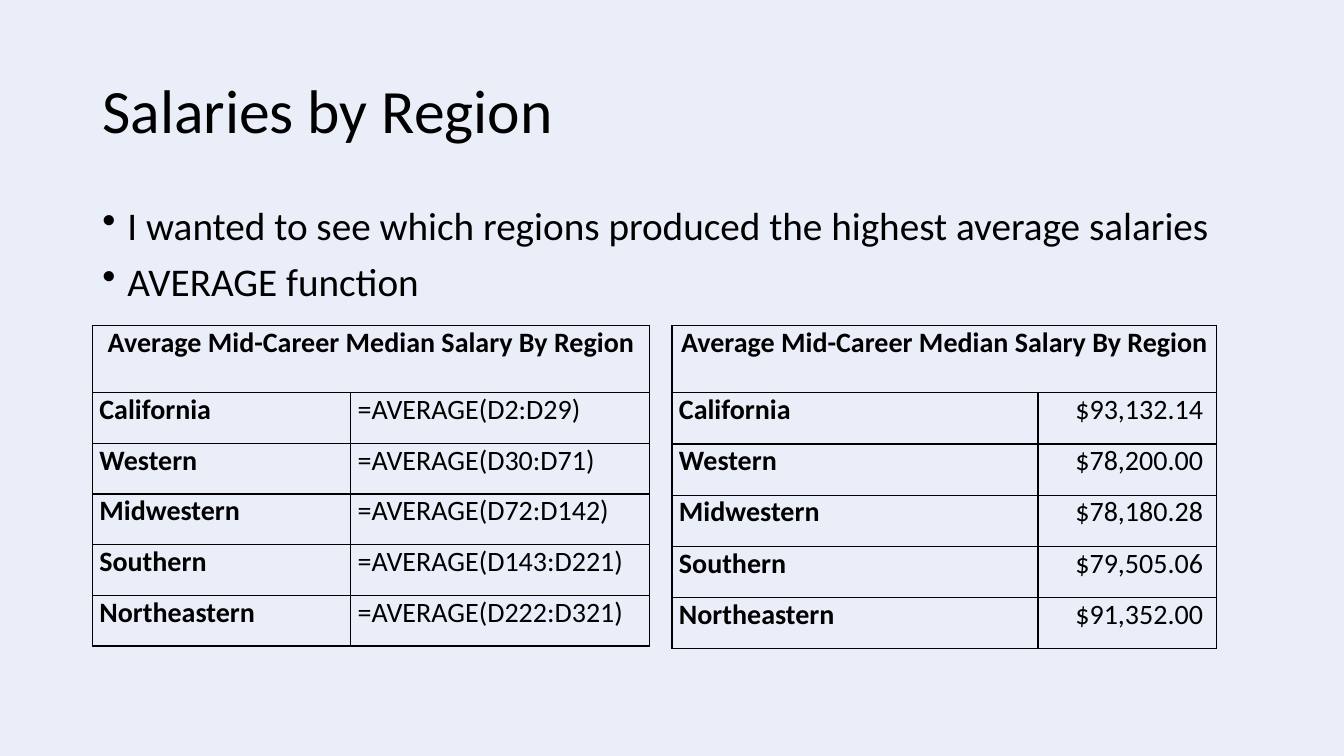
import dataclasses

import lxml.etree
import pptx
import pptx.dml.color
import pptx.enum.text
import pptx.oxml
import pptx.oxml.ns
import pptx.util

Pt = pptx.util.Pt
Align = pptx.enum.text.PP_ALIGN
Anchor = pptx.enum.text.MSO_ANCHOR


@dataclasses.dataclass(frozen=True)
class Theme:
    font: str = "Calibri"
    background: str = "E9EEF8"
    ink: str = "000000"
    title_size: float = 44
    body_size: float = 28
    table_size: float = 20
    border_width: float = 1
    cell_inset: float = 5
    amount_inset: float = 9.5


class SlideBuilder:
    def __init__(self, slide, theme):
        self.slide = slide
        self.theme = theme

    def paint_background(self):
        fill = self.slide.background.fill
        fill.solid()
        fill.fore_color.rgb = pptx.dml.color.RGBColor.from_string(self.theme.background)

    def style_paragraph(self, paragraph, size, bold=False):
        font = paragraph.font
        font.name = self.theme.font
        font.size = Pt(size)
        font.bold = bold
        font.color.rgb = pptx.dml.color.RGBColor.from_string(self.theme.ink)

    def add_text(self, box, lines, size, anchor=Anchor.TOP, space_before=0):
        frame = self.slide.shapes.add_textbox(*map(Pt, box)).text_frame
        frame.word_wrap = True
        frame.vertical_anchor = anchor
        frame.text = "\n".join(lines)
        for paragraph in frame.paragraphs:
            paragraph.line_spacing = 0.9
            paragraph.space_before = Pt(space_before)
            self.style_paragraph(paragraph, size)
        return frame

    def add_bullets(self, box, lines, size, indent=18):
        frame = self.add_text(box, lines, size, space_before=10)
        for paragraph in frame.paragraphs:
            properties = paragraph._p.get_or_add_pPr()
            properties.set("marL", str(Pt(indent)))
            properties.set("indent", str(-Pt(indent)))
            bullet = pptx.oxml.parse_xml(
                f'<a:buChar {pptx.oxml.ns.nsdecls("a")} char="•"/>')
            properties.insert_element_before(bullet, "a:tabLst", "a:defRPr", "a:extLst")

    def add_borders(self, cell):
        """Draw all four cell edges; must run before the cell's fill is set."""
        properties = cell._tc.get_or_add_tcPr()
        qualify = pptx.oxml.ns.qn
        for edge in "LRTB":
            line = lxml.etree.SubElement(properties, qualify(f"a:ln{edge}"),
                                         w=str(Pt(self.theme.border_width)))
            fill = lxml.etree.SubElement(line, qualify("a:solidFill"))
            lxml.etree.SubElement(fill, qualify("a:srgbClr"), val=self.theme.ink)

    def fill_cell(self, cell, text, bold, alignment, right_inset):
        cell.text = text
        cell.margin_left = Pt(self.theme.cell_inset)
        cell.margin_right = Pt(right_inset)
        cell.margin_top = cell.margin_bottom = Pt(0)
        self.add_borders(cell)
        cell.fill.background()
        paragraph = cell.text_frame.paragraphs[0]
        paragraph.alignment = alignment
        self.style_paragraph(paragraph, self.theme.table_size, bold)

    def add_region_table(self, left, top, widths, row_height, heading, rows,
                         value_alignment, value_inset):
        heights = [48] + [row_height] * len(rows)
        table = self.slide.shapes.add_table(
            len(heights), len(widths), Pt(left), Pt(top),
            Pt(sum(widths)), Pt(sum(heights))).table
        table.first_row = table.horz_banding = False
        for column, width in zip(table.columns, widths):
            column.width = Pt(width)
        for row, height in zip(table.rows, heights):
            row.height = Pt(height)

        inset = self.theme.cell_inset
        table.cell(0, 0).merge(table.cell(0, 1))
        self.fill_cell(table.cell(0, 0), heading, True, Align.CENTER, inset)
        self.add_borders(table.cell(0, 1))
        for index, (region, value) in enumerate(rows, start=1):
            self.fill_cell(table.cell(index, 0), region, True, Align.LEFT, inset)
            self.fill_cell(table.cell(index, 1), value, False, value_alignment, value_inset)


REGIONS = ["California", "Western", "Midwestern", "Southern", "Northeastern"]
LAST_ROWS = [29, 71, 142, 221, 321]
FIRST_ROWS = [2] + [last + 1 for last in LAST_ROWS[:-1]]
FORMULAS = [f"=AVERAGE(D{first}:D{last})" for first, last in zip(FIRST_ROWS, LAST_ROWS)]
AVERAGES = [93132.14, 78200.00, 78180.28, 79505.06, 91352.00]
AMOUNTS = [f"${average:,.2f}" for average in AVERAGES]
HEADING = "Average Mid-Career Median Salary By Region"


def main():
    presentation = pptx.Presentation()
    presentation.slide_width = Pt(960)
    presentation.slide_height = Pt(540)
    slide = presentation.slides.add_slide(presentation.slide_layouts[6])
    theme = Theme()
    builder = SlideBuilder(slide, theme)

    left, table_top = 66, 232.5
    builder.paint_background()
    builder.add_text((left, 28.75, 828, 104.4), ["Salaries by Region"],
                     theme.title_size, Anchor.MIDDLE)
    builder.add_bullets(
        (left, 143.75, 828, 342.6),
        ["I wanted to see which regions produced the highest average salaries",
         "AVERAGE function"],
        theme.body_size)
    builder.add_region_table(left, table_top, [184.5, 213.5], 36.2, HEADING,
                             list(zip(REGIONS, FORMULAS)), Align.LEFT, theme.cell_inset)
    builder.add_region_table(480, table_top, [261.5, 127.5], 36.6, HEADING,
                             list(zip(REGIONS, AMOUNTS)), Align.RIGHT, theme.amount_inset)
    presentation.save("out.pptx")


if __name__ == "__main__":
    main()
